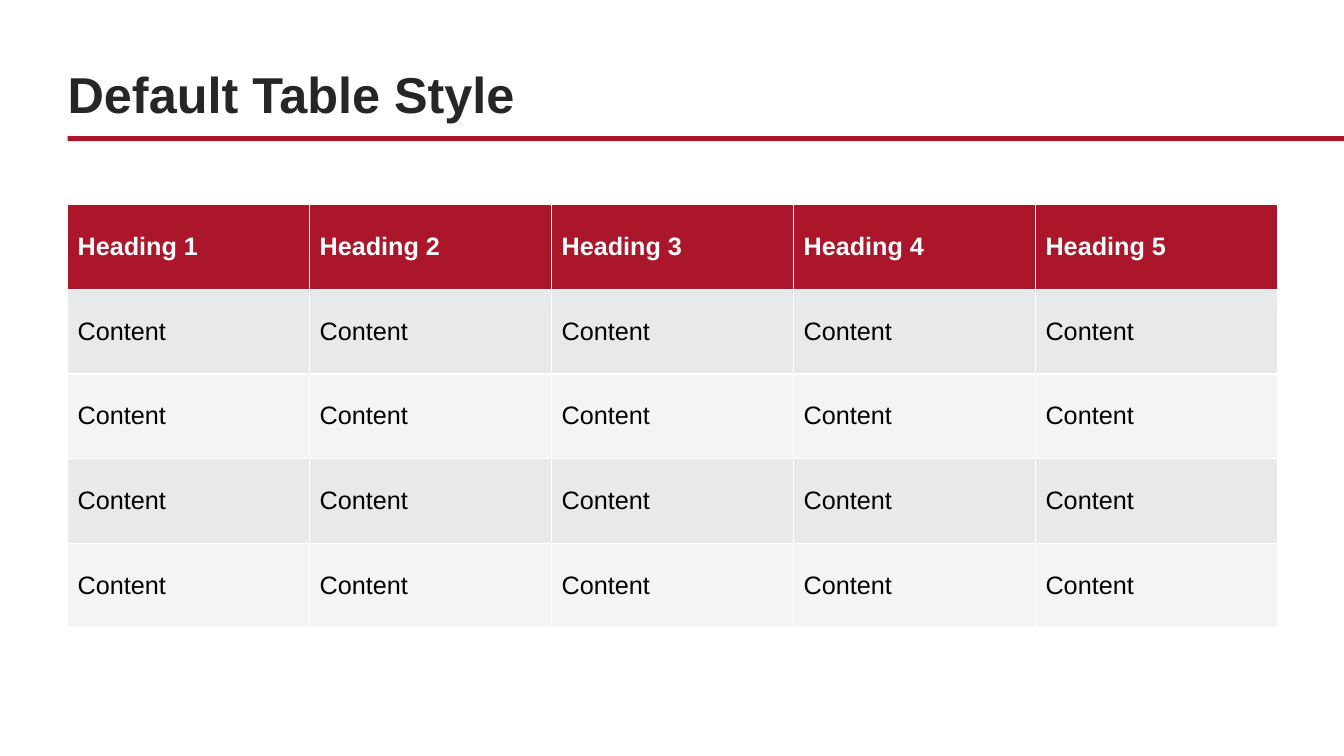
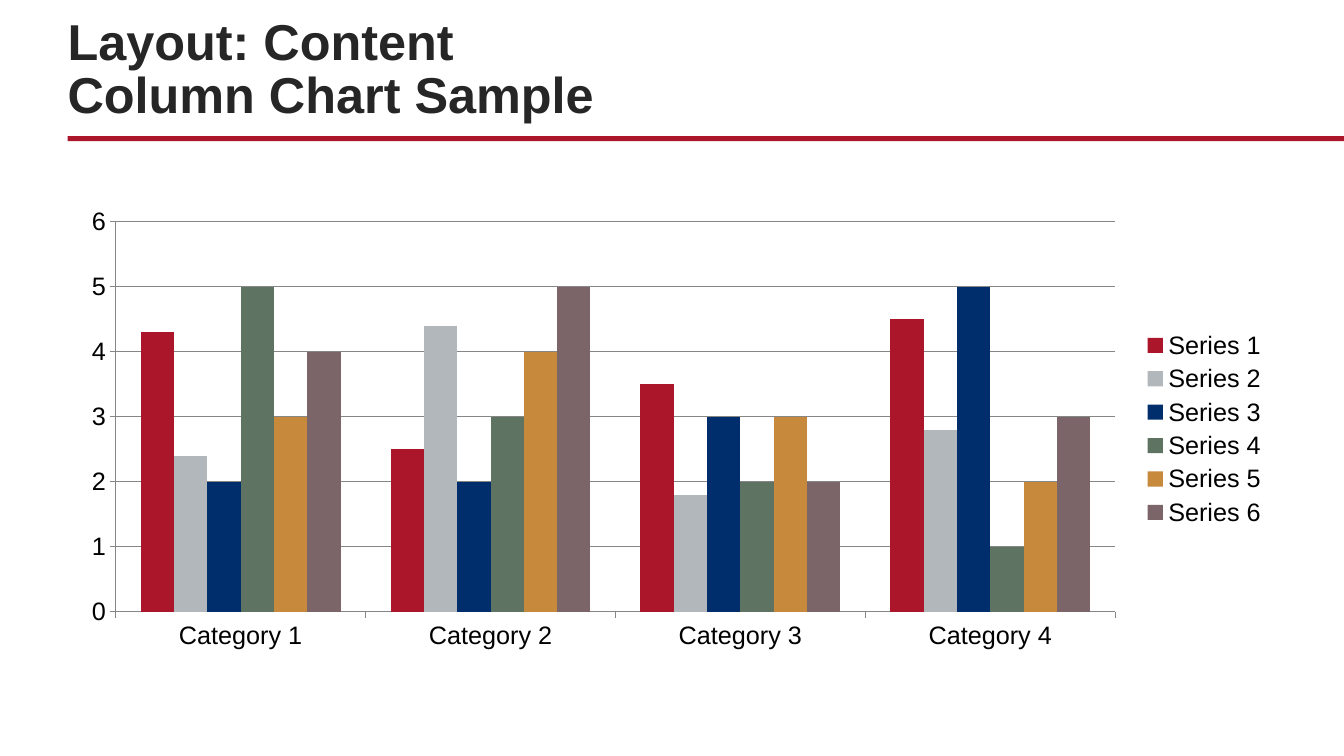
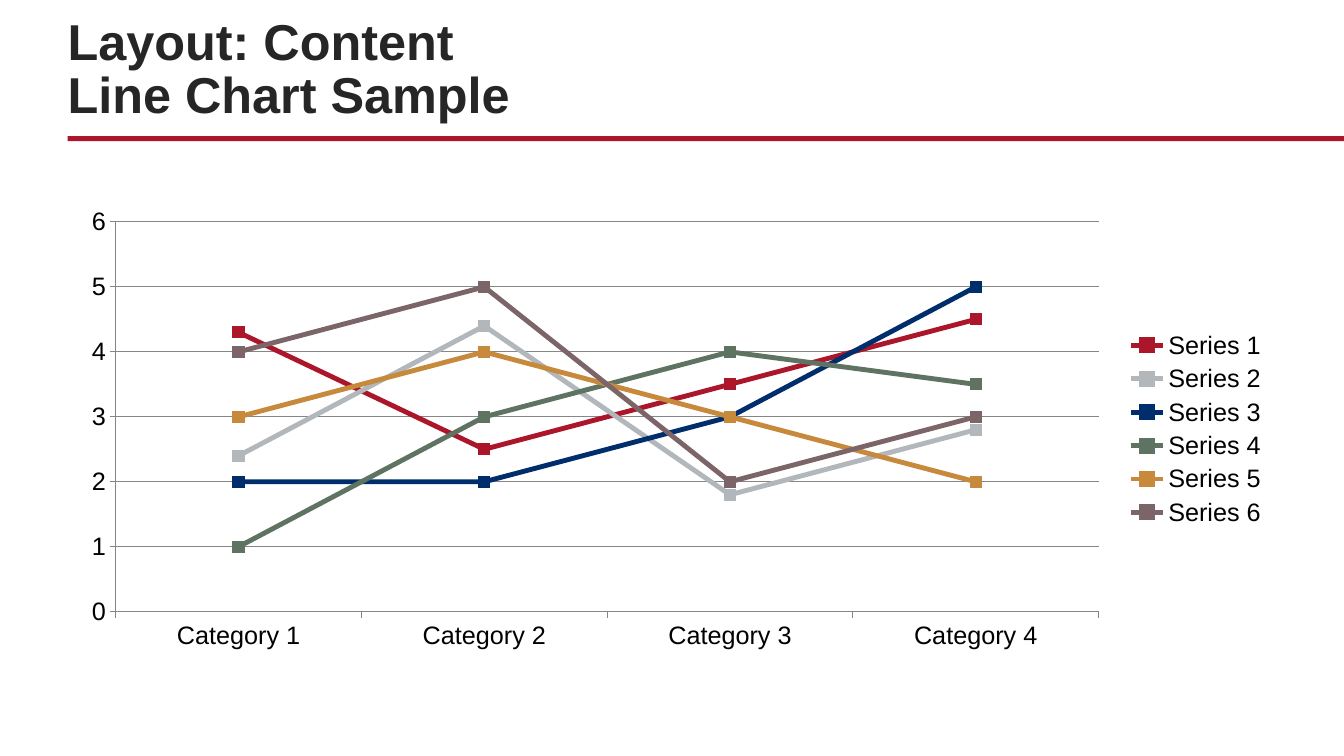
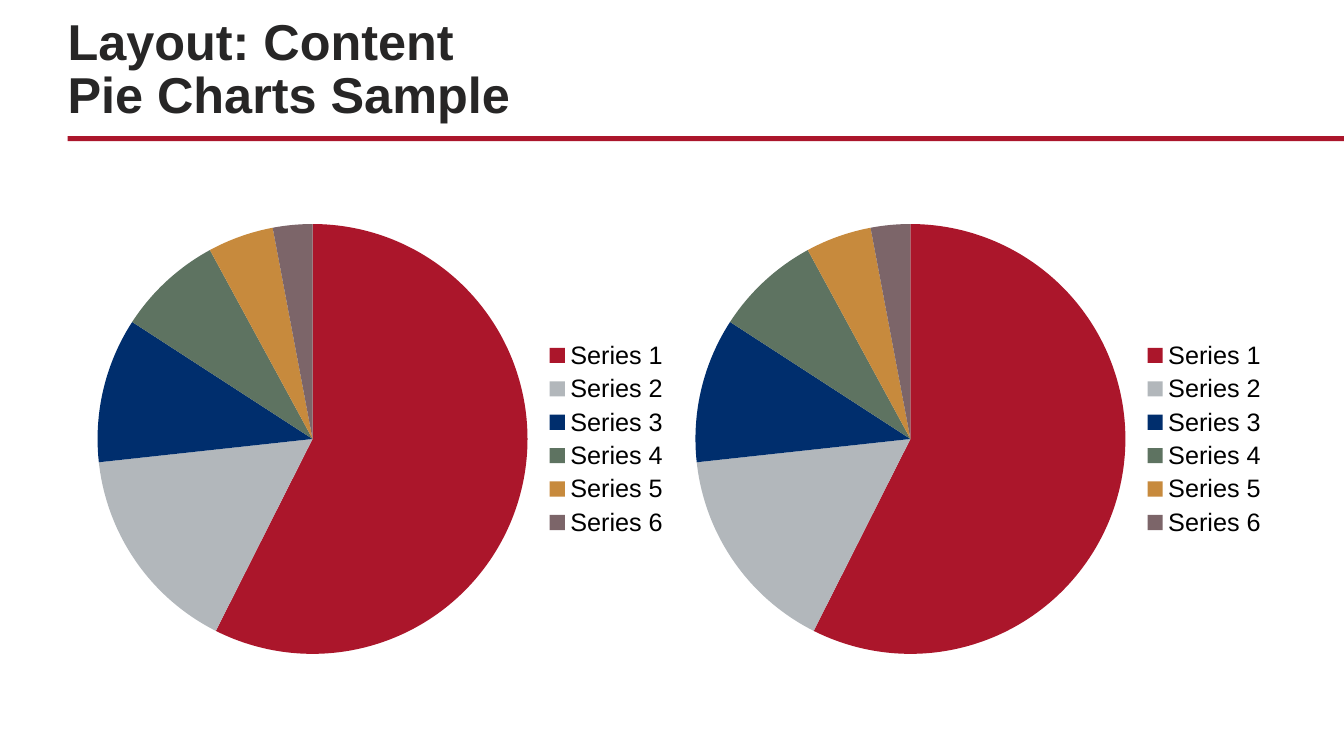
from lxml import etree
from pptx import Presentation
from pptx.chart.data import CategoryChartData
from pptx.dml.color import RGBColor
from pptx.enum.chart import (XL_CHART_TYPE as CHART, XL_LEGEND_POSITION as LEGEND,
                             XL_MARKER_STYLE as MARKER, XL_TICK_MARK as TICK)
from pptx.enum.shapes import MSO_SHAPE
from pptx.enum.text import MSO_ANCHOR as ANCHOR, MSO_AUTO_SIZE as AUTO_SIZE, PP_ALIGN as ALIGN
from pptx.oxml.ns import qn
from pptx.util import Inches, Pt

COLORS = {
    "red": "AB162B", "silver": "B2B7BB", "navy": "002E6D", "green": "5E7361",
    "ochre": "C78A3D", "mauve": "7C6569", "title": "272626", "text": "000000",
    "white": "FFFFFF", "axis": "868686",
}
SERIES_COLORS = ["red", "silver", "navy", "green", "ochre", "mauve"]
SERIES_NAMES = [f"Series {number}" for number in range(1, 7)]
CATEGORIES = [f"Category {number}" for number in range(1, 5)]
FONT = "Arial"
MARGIN = 0.67
CONTENT_WIDTH = 12


def rgb(name):
    return RGBColor.from_string(COLORS[name])


def paint(fill, color):
    fill.solid()
    fill.fore_color.rgb = rgb(color)


def style_font(font, size, color, bold=False):
    font.name, font.size, font.bold = FONT, Pt(size), bold
    font.color.rgb = rgb(color)


class Deck:
    def __init__(self):
        self.presentation = Presentation()
        self.presentation.slide_width = Inches(13.33)
        self.presentation.slide_height = Inches(7.5)
        self.layout = self.presentation.slide_layouts.get_by_name("Title Only")
        self.slide = None

    def add_slide(self, title):
        first = self.slide is None
        self.slide = self.presentation.slides.add_slide(self.layout)
        if first:
            self.add_layout_rule()
        self.format_title(title)

    def add_layout_rule(self):
        """Draw the red rule and move it to the layout, so every slide shows it."""
        rule = self.slide.shapes.add_shape(MSO_SHAPE.RECTANGLE, Inches(MARGIN), Inches(1.35),
                                           Inches(12.66), Inches(0.05))
        rule.shadow.inherit = False
        paint(rule.fill, "red")
        rule.line.fill.background()
        self.layout.shapes.element.append(rule.element)

    def format_title(self, text):
        title = self.slide.shapes.title
        title.left, title.top = Inches(MARGIN), Inches(0.4)
        title.width, title.height = Inches(CONTENT_WIDTH), Inches(0.88)
        frame = title.text_frame
        frame.auto_size, frame.word_wrap = AUTO_SIZE.NONE, True
        frame.vertical_anchor = ANCHOR.BOTTOM
        frame.margin_left = frame.margin_right = 0
        frame.margin_top = frame.margin_bottom = Inches(0.05)
        paragraph = frame.paragraphs[0]
        paragraph.text = text
        paragraph.alignment = ALIGN.LEFT
        paragraph.line_spacing = Pt(38)
        for run in paragraph.runs:
            style_font(run.font, 36, "title", bold=True)

    def add_table(self, rows, top, row_height):
        columns = len(rows[0])
        table = self.slide.shapes.add_table(
            len(rows), columns, Inches(MARGIN), Inches(top),
            Inches(CONTENT_WIDTH), Inches(row_height * len(rows))).table
        table.first_row = table.horz_banding = False
        for column in table.columns:
            column.width = Inches(CONTENT_WIDTH / columns)
        for row_index, texts in enumerate(rows):
            table.rows[row_index].height = Inches(row_height)
            for column_index, text in enumerate(texts):
                self.format_cell(table.cell(row_index, column_index), text, row_index)

    def format_cell(self, cell, text, row_index):
        header = row_index == 0
        cell.text = text
        cell.vertical_anchor = ANCHOR.MIDDLE
        style_font(cell.text_frame.paragraphs[0].runs[0].font, 18,
                   "white" if header else "text", bold=header)
        paint(cell.fill, "red" if header else "silver")
        properties = cell._tc.get_or_add_tcPr()
        if not header:
            opacity = 30 if row_index % 2 else 15
            color = properties.find(f".//{qn('a:srgbClr')}")
            etree.SubElement(color, qn("a:alpha"), val=str(opacity * 1000))
        for position, side in enumerate(("lnL", "lnR", "lnT", "lnB")):
            border = etree.Element(qn(f"a:{side}"), w=str(Pt(1)))
            fill = etree.SubElement(border, qn("a:solidFill"))
            etree.SubElement(fill, qn("a:srgbClr"), val=COLORS["white"])
            properties.insert(position, border)

    def add_chart(self, kind, categories, series, left, top, width):
        data = CategoryChartData()
        data.categories = categories
        for name, values in series:
            data.add_series(name, values)
        chart = self.slide.shapes.add_chart(kind, Inches(left), Inches(top), Inches(width),
                                            Inches(4.57), data).chart
        style_font(chart.font, 18, "text")
        chart.has_title = False
        chart.has_legend = True
        chart.legend.position = LEGEND.RIGHT
        chart.legend.include_in_layout = False
        return chart

    def add_axis_chart(self, kind, values):
        chart = self.add_chart(kind, CATEGORIES, zip(SERIES_NAMES, values),
                               MARGIN, 1.97, CONTENT_WIDTH)
        chart.plots[0].vary_by_categories = False
        value_axis = chart.value_axis
        value_axis.minimum_scale, value_axis.maximum_scale = 0, 6
        value_axis.major_unit = 1
        value_axis.has_major_gridlines = True
        for axis in (chart.category_axis, value_axis):
            axis.major_tick_mark = TICK.OUTSIDE
        for part in (chart.category_axis, value_axis, value_axis.major_gridlines):
            part.format.line.color.rgb = rgb("axis")
            part.format.line.width = Pt(0.75)
        return chart.plots[0]

    def add_column_chart(self, values):
        plot = self.add_axis_chart(CHART.COLUMN_CLUSTERED, values)
        plot.gap_width, plot.overlap = 150, 0
        for series, color in zip(plot.series, SERIES_COLORS):
            paint(series.format.fill, color)

    def add_line_chart(self, values):
        plot = self.add_axis_chart(CHART.LINE_MARKERS, values)
        for series, color in zip(plot.series, SERIES_COLORS):
            series.smooth = False
            series.format.line.color.rgb = rgb(color)
            series.format.line.width = Pt(3.5)
            series.marker.style, series.marker.size = MARKER.SQUARE, 8
            paint(series.marker.format.fill, color)
            series.marker.format.line.color.rgb = rgb(color)

    def add_pie_chart(self, values, left):
        chart = self.add_chart(CHART.PIE, SERIES_NAMES, [(SERIES_NAMES[0], values)],
                               left, 2.07, 5.91)
        plot = chart.plots[0]
        plot.vary_by_categories = True
        for index, color in enumerate(SERIES_COLORS):
            paint(plot.series[0].points[index].format.fill, color)


def main():
    deck = Deck()

    deck.add_slide("Default Table Style")
    headings = [f"Heading {number}" for number in range(1, 6)]
    deck.add_table([headings] + [["Content"] * 5] * 4, top=2.03, row_height=0.84)

    column_values = [(4.3, 2.5, 3.5, 4.5), (2.4, 4.4, 1.8, 2.8), (2, 2, 3, 5),
                     (5, 3, 2, 1), (3, 4, 3, 2), (4, 5, 2, 3)]
    deck.add_slide("Layout: Content\nColumn Chart Sample")
    deck.add_column_chart(column_values)

    line_values = column_values.copy()
    line_values[3] = (1, 3, 4, 3.5)
    deck.add_slide("Layout: Content\nLine Chart Sample")
    deck.add_line_chart(line_values)

    deck.add_slide("Layout: Content\nPie Charts Sample")
    for left in (0.83, 6.76):
        deck.add_pie_chart((58, 16, 11, 8, 5, 3), left)

    deck.presentation.save("out.pptx")


if __name__ == "__main__":
    main()
